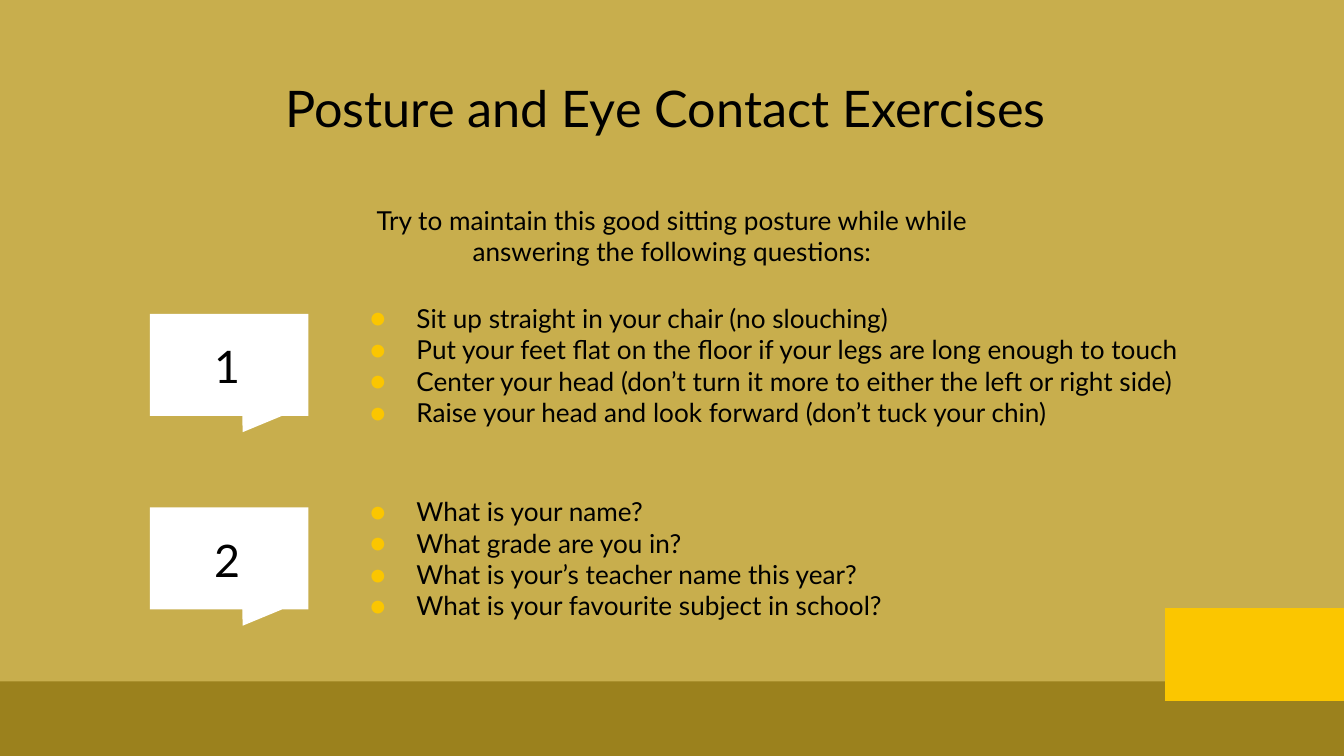
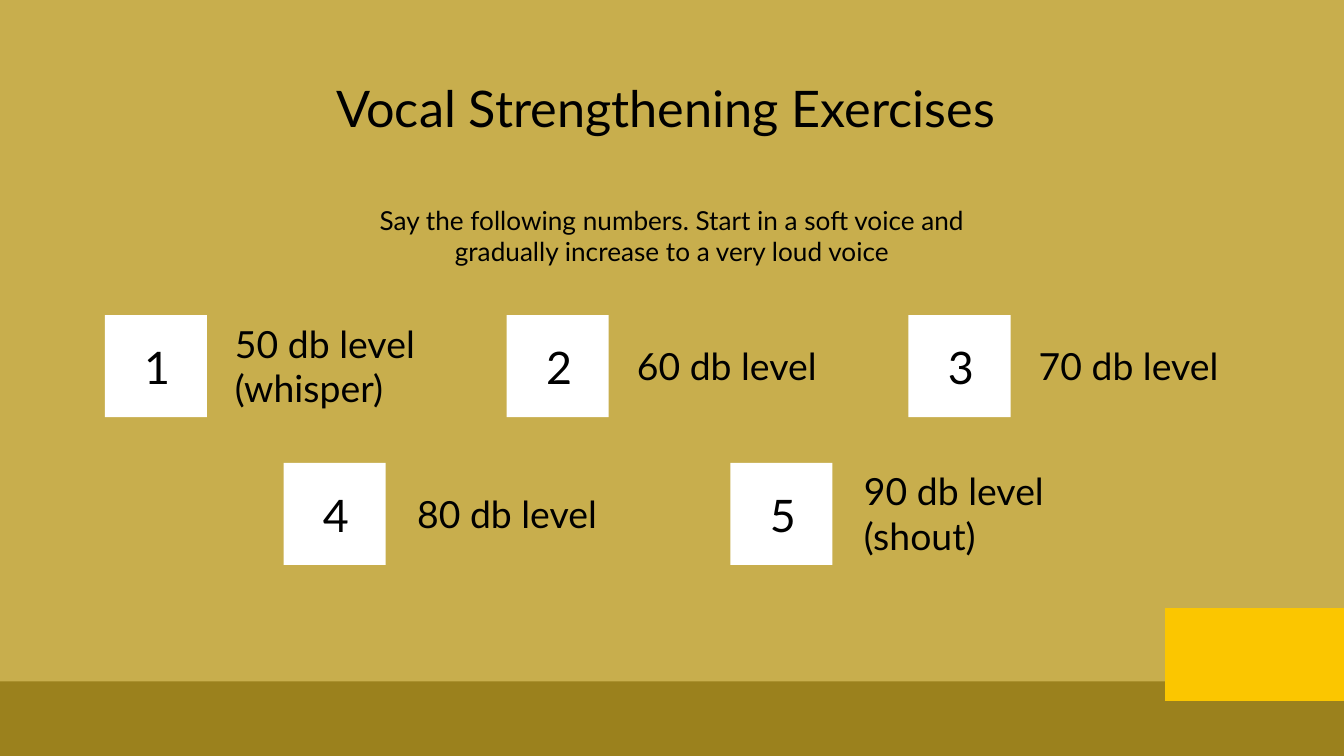
"""Builds two speech exercise slides: posture with eye contact, and vocal strengthening."""
from typing import NamedTuple

from lxml import etree
from pptx import Presentation
from pptx import util as u
from pptx.dml import color
from pptx.enum import shapes, text
from pptx.oxml import ns
from pptx.slide import Slide

PX = u.Inches(1) // 200
SLIDE_WIDTH, SLIDE_HEIGHT = 2000, 1125
FONT = "Lato"
SAND, OLIVE, AMBER = "C8AE4D", "9B811D", "FBC600"
WHITE, BLACK = "FFFFFF", "000000"
INSET, BULLET_MARGIN, BULLET_HANG = 20, 100, 69
SQUARE = 152
RECT, CALLOUT = shapes.MSO_SHAPE.RECTANGLE, shapes.MSO_SHAPE.RECTANGULAR_CALLOUT
LEFT, CENTER = text.PP_ALIGN.LEFT, text.PP_ALIGN.CENTER


class Box(NamedTuple):
    left: int
    top: int
    width: int
    height: int


class Exercise(NamedTuple):
    number: int
    top: int
    points: list[str]


class LevelRow(NamedTuple):
    left: int
    top: int
    pitch: int
    label_shift: int
    first_number: int
    labels: list[str]


EXERCISES = [
    Exercise(1, 467, [
        "Sit up straight in your chair (no slouching)",
        "Put your feet flat on the floor if your legs are long enough to touch",
        "Center your head (don’t turn it more to either the left or right side)",
        "Raise your head and look forward (don’t tuck your chin)",
    ]),
    Exercise(2, 755, [
        "What is your name?",
        "What grade are you in?",
        "What is your’s teacher name this year?",
        "What is your favourite subject in school?",
    ]),
]
LEVEL_ROWS = [
    LevelRow(156, 469, 598, 174, 1, ["50 db level (whisper)", "60 db level", "70 db level"]),
    LevelRow(422, 689, 665, 179, 4, ["80 db level", "90 db level (shout)"]),
]


def rgb(value: str) -> color.RGBColor:
    return color.RGBColor.from_string(value)


def emu(box: Box) -> list[int]:
    return [length * PX for length in box]


def add_block(slide: Slide, box: Box, fill: str, kind=RECT, adjustments: tuple = ()) -> None:
    block = slide.shapes.add_shape(kind, *emu(box))
    block.shadow.inherit = False
    block.fill.solid()
    block.fill.fore_color.rgb = rgb(fill)
    block.line.fill.background()
    for index, value in enumerate(adjustments):
        block.adjustments[index] = value


def add_bullet(paragraph) -> None:
    properties = paragraph._p.get_or_add_pPr()
    properties.set("marL", str(BULLET_MARGIN * PX))
    properties.set("indent", str(-BULLET_HANG * PX))
    bullet_color = etree.SubElement(properties, ns.qn("a:buClr"))
    etree.SubElement(bullet_color, ns.qn("a:srgbClr"), val=AMBER)
    etree.SubElement(properties, ns.qn("a:buSzPts"), val="1300")
    etree.SubElement(properties, ns.qn("a:buFont"), typeface=FONT)
    etree.SubElement(properties, ns.qn("a:buChar"), char="●")


def add_text(slide: Slide, box: Box, *lines: str, size: int, align=LEFT,
             bulleted: bool = False) -> None:
    frame = slide.shapes.add_textbox(*emu(box)).text_frame
    frame.word_wrap = True
    frame.vertical_anchor = text.MSO_ANCHOR.MIDDLE
    frame.margin_left = frame.margin_right = INSET * PX
    frame.margin_top = frame.margin_bottom = INSET * PX
    for index, line in enumerate(lines):
        paragraph = frame.add_paragraph() if index else frame.paragraphs[0]
        paragraph.alignment = align
        if bulleted:
            add_bullet(paragraph)
        run = paragraph.add_run()
        run.text = line
        run.font.name = FONT
        run.font.size = u.Pt(size)
        run.font.color.rgb = rgb(BLACK)


def add_exercise_slide(prs, title: str, instruction: str) -> Slide:
    slide = prs.slides.add_slide(prs.slide_layouts[6])
    slide.background.fill.solid()
    slide.background.fill.fore_color.rgb = rgb(SAND)
    add_block(slide, Box(0, 1014, SLIDE_WIDTH, 111), OLIVE)
    add_block(slide, Box(1734, 905, 266, 138), AMBER)
    add_text(slide, Box(156, 118, 1688, 84), title, size=27, align=CENTER)
    add_text(slide, Box(518, 261, 964, 178), instruction, size=14, align=CENTER)
    return slide


def add_exercise(slide: Slide, exercise: Exercise) -> None:
    top = exercise.top
    add_block(slide, Box(223, top, 236, SQUARE), WHITE, CALLOUT, (0.085, 0.66))
    add_text(slide, Box(297, top + 36, 82, 82), str(exercise.number), size=24, align=CENTER)
    add_text(slide, Box(500, top - 22, 1278, 196), *exercise.points, size=14, bulleted=True)


def add_level_row(slide: Slide, row: LevelRow) -> None:
    for index, label in enumerate(row.labels):
        left = row.left + index * row.pitch
        number = str(row.first_number + index)
        add_block(slide, Box(left, row.top, SQUARE, SQUARE), WHITE)
        add_text(slide, Box(left + 39, row.top + 35, 74, 82), number, size=24, align=CENTER)
        add_text(slide, Box(left + row.label_shift, row.top + 40, 378, 70), label, size=20)


def main() -> None:
    prs = Presentation()
    prs.slide_width, prs.slide_height = SLIDE_WIDTH * PX, SLIDE_HEIGHT * PX
    posture = add_exercise_slide(
        prs, "Posture and Eye Contact Exercises ",
        "Try to maintain this good sitting posture while while answering the following questions:")
    for exercise in EXERCISES:
        add_exercise(posture, exercise)
    vocal = add_exercise_slide(
        prs, "Vocal Strengthening Exercises ",
        "Say the following numbers. Start in a soft voice and gradually increase to a very loud voice")
    for row in LEVEL_ROWS:
        add_level_row(vocal, row)
    prs.save("out.pptx")


if __name__ == "__main__":
    main()
